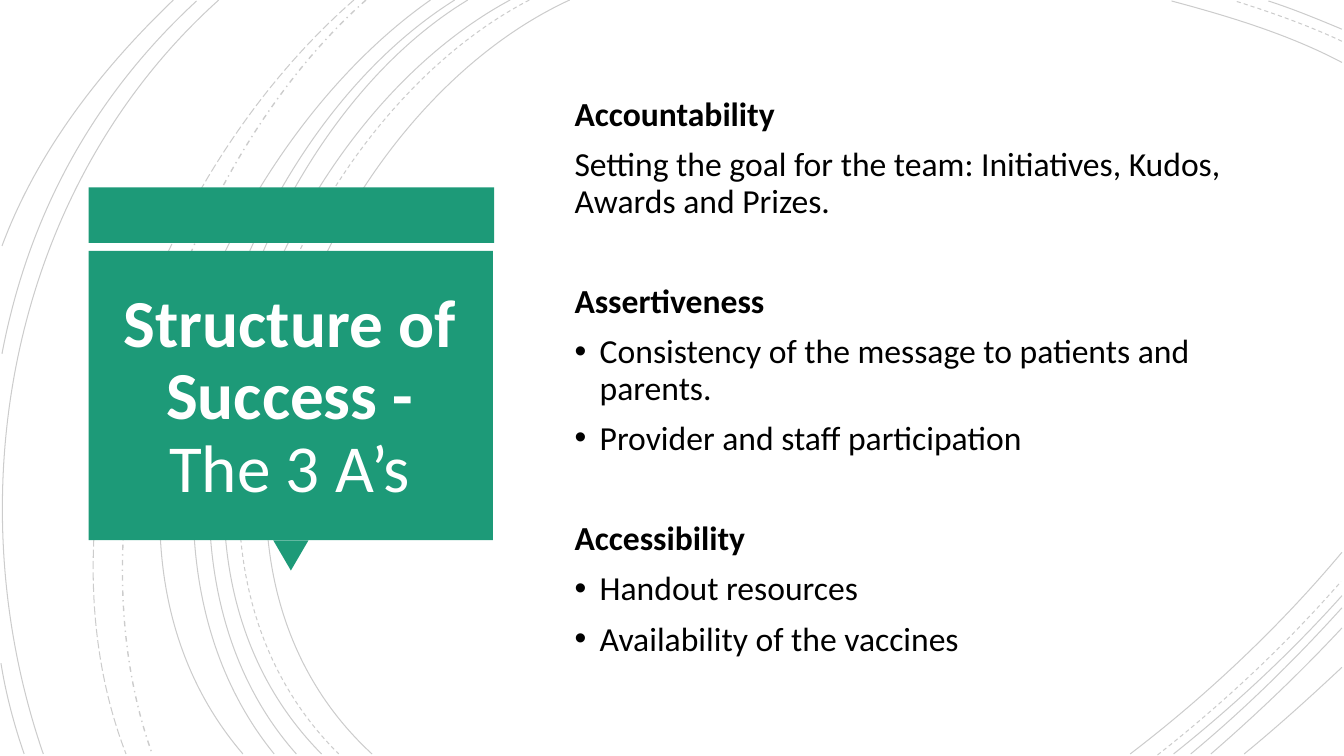
from dataclasses import dataclass

import pptx
import pptx.dml.color
import pptx.enum.dml
import pptx.enum.shapes
import pptx.enum.text
import pptx.oxml
import pptx.oxml.ns
import pptx.util
from lxml import etree

Inches = pptx.util.Inches
Pt = pptx.util.Pt
qn = pptx.oxml.ns.qn
Dash = pptx.enum.dml.MSO_LINE
Shape = pptx.enum.shapes.MSO_SHAPE
Align = pptx.enum.text.PP_ALIGN


@dataclass(frozen=True)
class Theme:
    accent: str = "1D9A78"
    ink: str = "000000"
    paper: str = "FFFFFF"
    font: str = "Calibri"
    title_size: int = 48
    body_size: int = 24
    line_spacing: float = 0.9
    para_gap: float = 10
    section_gap: float = 45.8
    arc_opacity: int = 20


THEME = Theme()

ARCS = [
    (Dash.SOLID, (5.65, 0), (3.15, 1.15), (1.43, 5.4), (3.69, 7.48)),
    (Dash.SOLID, (13.31, 0.62), (12.78, 0.34), (12.18, 0.16), (11.62, 0.01)),
    (Dash.SOLID, (11.21, 7.48), (11.97, 6.9), (12.69, 6.22), (13.31, 5.48)),
    (Dash.DASH, (5.25, 0), (2.85, 1.25), (1.23, 5.37), (3.36, 7.48)),
    (Dash.DASH, (13.31, 0.41), (12.97, 0.25), (12.6, 0.12), (12.25, 0.01)),
    (Dash.DASH, (11.48, 7.49), (12.13, 6.98), (12.75, 6.4), (13.3, 5.77)),
    (Dash.SOLID, (5.06, 0), (2.7, 1.27), (1.1, 5.37), (3.19, 7.48)),
    (Dash.SOLID, (13.31, 0.29), (13.07, 0.19), (12.83, 0.09), (12.58, 0.01)),
    (Dash.SOLID, (11.64, 7.48), (12.23, 7.01), (12.8, 6.48), (13.31, 5.91)),
    (Dash.SOLID, (4.64, 0), (2.44, 1.33), (1.1, 5.41), (2.94, 7.48)),
    (Dash.SOLID, (11.81, 7.48), (12.34, 7.04), (12.84, 6.55), (13.31, 6.03)),
    (Dash.SOLID, (4.51, 0), (2.31, 1.38), (0.97, 5.33), (2.72, 7.48)),
    (Dash.SOLID, (12.01, 7.48), (12.46, 7.09), (12.9, 6.67), (13.31, 6.23)),
    (Dash.SOLID, (4.27, 0), (2.17, 1.47), (0.53, 5.29), (2.41, 7.48)),
    (Dash.SOLID, (12.34, 7.48), (12.67, 7.21), (12.99, 6.92), (13.31, 6.62)),
    (Dash.DASH_DOT, (3.63, 0), (1.76, 1.66), (0.65, 5.09), (1.51, 7.48)),
    (Dash.LONG_DASH, (3.51, 0), (1.57, 1.69), (0.29, 4.99), (1.25, 7.48)),
    (Dash.SOLID, (2.17, 0), (0.11, 1.85), (-0.46, 4.9), (0.43, 7.48)),
    (Dash.SOLID, (1.95, 0.01), (0.92, 0.96), (0.28, 2.14), (0.02, 3.51)),
    (Dash.SOLID, (0.01, 6.58), (0.06, 6.89), (0.14, 7.19), (0.24, 7.48)),
    (Dash.SOLID, (1.72, 0), (1, 0.69), (0.37, 1.5), (0.02, 2.44)),
]

SECTIONS = [
    ("Accountability", False, [
        "Setting the goal for the team: Initiatives, Kudos, Awards and Prizes.",
    ]),
    ("Assertiveness", True, [
        "Consistency of the message to patients and parents.",
        "Provider and staff participation",
    ]),
    ("Accessibility", True, ["Handout resources", "Availability of the vaccines"]),
]


def rgb(value):
    return pptx.dml.color.RGBColor.from_string(value)


def bend(arc):
    segments = list(arc._element.iter(qn("a:lnTo")))
    outline = segments[0].getparent()
    curve = etree.SubElement(outline, qn("a:cubicBezTo"))
    for segment in segments:
        curve.append(segment[0])
        outline.remove(segment)


def add_arc(group, dash, *points):
    start, *rest = [(Inches(x), Inches(y)) for x, y in points]
    builder = group.shapes.build_freeform(*start)
    builder.add_line_segments(rest, close=False)
    arc = builder.convert_to_shape()
    bend(arc)
    arc.shadow.inherit = False
    arc.fill.background()
    arc.line.width = Pt(1 if dash == Dash.DASH_DOT else 0.75)
    arc.line.color.rgb = rgb(THEME.ink)
    arc.line.dash_style = dash
    color = arc.line._ln.find(".//" + qn("a:srgbClr"))
    alpha = etree.SubElement(color, qn("a:alpha"))
    alpha.set("val", str(THEME.arc_opacity * 1000))


def add_block(group, kind, left, top, width, height, rotation=0):
    block = group.shapes.add_shape(
        kind, Inches(left), Inches(top), Inches(width), Inches(height))
    block.rotation = rotation
    block.shadow.inherit = False
    block.fill.solid()
    block.fill.fore_color.rgb = rgb(THEME.accent)
    block.line.fill.background()


def add_text(para, text, size=THEME.body_size, color=THEME.ink, bold=False,
             align=Align.LEFT, before=0, bullet=False):
    para.alignment = align
    para.line_spacing = THEME.line_spacing
    para.space_before = Pt(before)
    span = para.add_run()
    span.text = text
    span.font.name = THEME.font
    span.font.size = Pt(size)
    span.font.bold = bold
    span.font.color.rgb = rgb(color)
    if bullet:
        properties = para._p.get_or_add_pPr()
        properties.set("marL", str(Inches(0.25)))
        properties.set("indent", str(Inches(-0.25)))
        face = etree.SubElement(properties, qn("a:buFont"))
        face.set("typeface", "Arial")
        mark = etree.SubElement(properties, qn("a:buChar"))
        mark.set("char", "•")


def set_frame(box):
    frame = box.text_frame
    frame.word_wrap = True
    frame.auto_size = pptx.enum.text.MSO_AUTO_SIZE.NONE
    frame.vertical_anchor = pptx.enum.text.MSO_ANCHOR.MIDDLE
    return frame


def place_title(page):
    title = page.shapes.title
    title.left, title.top = Inches(0.99), Inches(2.64)
    title.width, title.height = Inches(3.77), Inches(2.62)
    page.shapes._spTree.append(title._element)
    para = set_frame(title).paragraphs[0]
    style = dict(size=THEME.title_size, color=THEME.paper, align=Align.CENTER)
    add_text(para, "Structure of Success -", bold=True, **style)
    para.add_line_break()
    add_text(para, "The 3 A’s", **style)


def add_sections(page):
    box = page.shapes.add_textbox(
        Inches(5.6), Inches(0.88), Inches(6.87), Inches(5.74))
    frame = set_frame(box)
    for number, (heading, bullet, lines) in enumerate(SECTIONS):
        para = frame.add_paragraph() if number else frame.paragraphs[0]
        gap = THEME.section_gap if number else THEME.para_gap
        add_text(para, heading, bold=True, before=gap)
        for line in lines:
            add_text(frame.add_paragraph(), line, before=THEME.para_gap, bullet=bullet)


def main():
    deck = pptx.Presentation()
    deck.slide_width, deck.slide_height = Inches(13.33), Inches(7.5)
    page = deck.slides.add_slide(deck.slide_layouts[5])
    page.background.fill.solid()
    page.background.fill.fore_color.rgb = rgb(THEME.paper)

    arcs = page.shapes.add_group_shape()
    for arc in ARCS:
        add_arc(arcs, *arc)

    callout = page.shapes.add_group_shape()
    add_block(callout, Shape.RECTANGLE, 0.88, 1.86, 4.02, 0.55)
    add_block(callout, Shape.ISOSCELES_TRIANGLE, 2.71, 5.36, 0.35, 0.3, rotation=180)
    add_block(callout, Shape.RECTANGLE, 0.88, 2.49, 4.01, 2.87)

    place_title(page)
    add_sections(page)
    deck.save("out.pptx")


if __name__ == "__main__":
    main()
